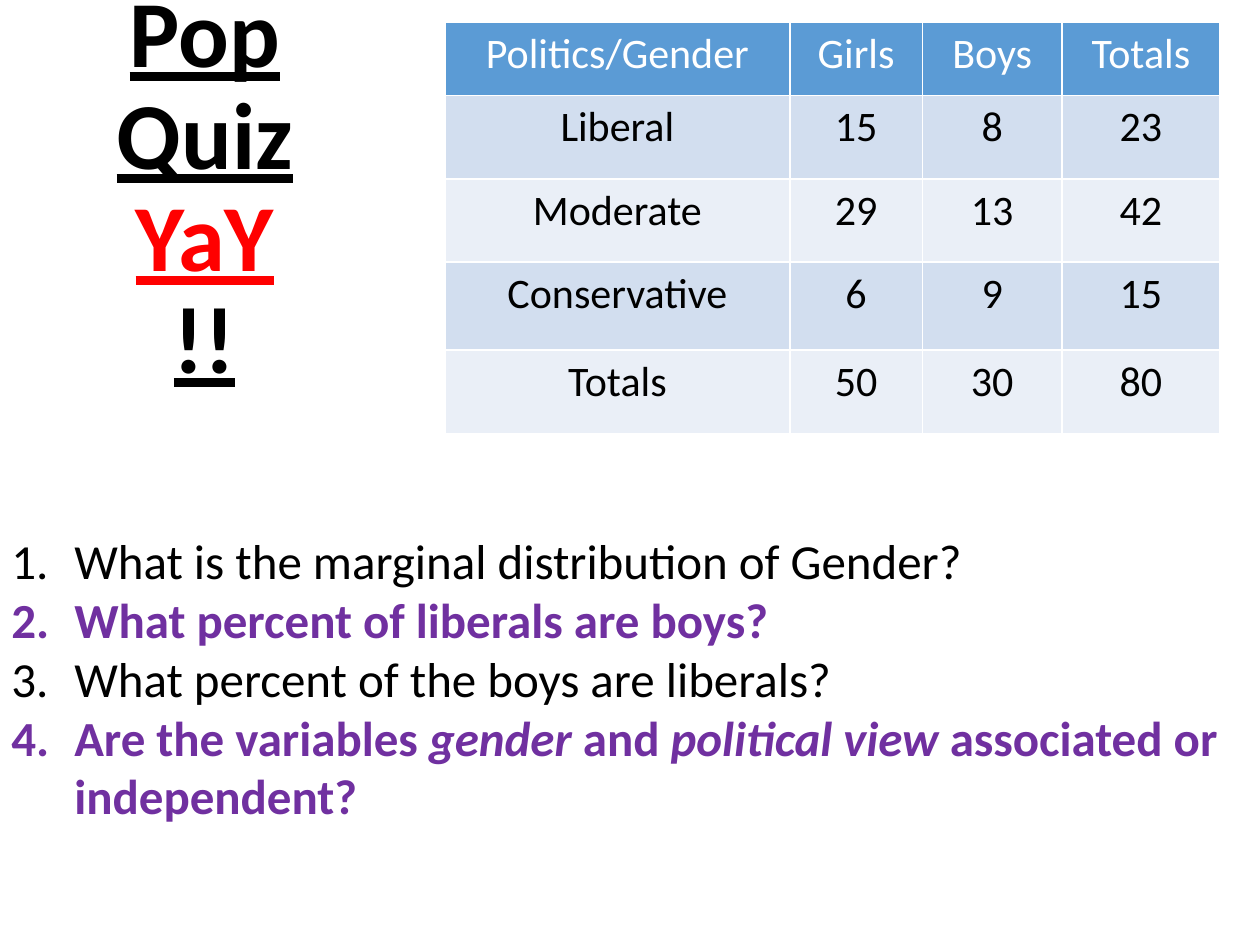
import pptx
import pptx.util
import pptx.dml.color
import pptx.enum.text
import pptx.oxml.ns
import lxml.etree

Inches = pptx.util.Inches
Pt = pptx.util.Pt
CENTER = pptx.enum.text.PP_ALIGN.CENTER
MIDDLE = pptx.enum.text.MSO_ANCHOR.MIDDLE

# Content
TITLE = [("Pop Quiz ", "text"), ("YaY", "alert"), ("\v", "text"), ("!!", "text")]
TABLE = [
    ("Politics/Gender", "Girls", "Boys", "Totals"),
    ("Liberal", "15", "8", "23"),
    ("Moderate", "29", "13", "42"),
    ("Conservative", "6", "9", "15"),
    ("Totals", "50", "30", "80"),
]
COLUMN_WIDTHS = [2.74, 1.05, 1.11, 1.25]
ROW_HEIGHTS = [0.58, 0.66, 0.66, 0.7, 0.66]
# Each question is a list of (text, italic); every second one is emphasised
QUESTIONS = [
    [("What is the marginal distribution of Gender?", False)],
    [("What percent of liberals are boys?", False)],
    [("What percent of the boys are liberals?", False)],
    [("Are the variables ", False), ("gender", True), (" and ", False),
     ("political view ", True), ("associated or independent?", False)],
]

THEME = {
    "font": "Calibri", "title_size": 54, "table_size": 24, "question_size": 28,
    "text": "000000", "alert": "FF0000", "emphasis": "7030A0",
    "header_text": "FFFFFF", "header": "5B9BD5", "bands": ("D2DEEF", "EAEFF7"),
}


def rgb(name):
    return pptx.dml.color.RGBColor.from_string(THEME.get(name, name))


def style_font(font, size, color, bold=False):
    font.name = THEME["font"]
    font.size = Pt(THEME[size])
    font.bold = bold
    font.color.rgb = rgb(color)


def add_text_frame(slide, left, top, width, height):
    box = slide.shapes.add_textbox(Inches(left), Inches(top), Inches(width), Inches(height))
    box.text_frame.word_wrap = True
    return box.text_frame


def add_title(slide):
    frame = add_text_frame(slide, 0.25, 0.74, 2.75, 1.53)
    frame.vertical_anchor = MIDDLE
    paragraph = frame.paragraphs[0]
    paragraph.alignment = CENTER
    paragraph.line_spacing = 0.9
    style_font(paragraph.font, "title_size", "text", bold=True)
    paragraph.font.underline = True
    for text, color in TITLE:
        if text == "\v":
            paragraph.add_line_break()
            continue
        run = paragraph.add_run()
        run.text = text
        run.font.color.rgb = rgb(color)


def add_survey_table(slide):
    table = slide.shapes.add_table(
        len(TABLE), len(COLUMN_WIDTHS), Inches(3.53), Inches(0.18),
        Inches(sum(COLUMN_WIDTHS)), Inches(sum(ROW_HEIGHTS))).table
    for column, width in zip(table.columns, COLUMN_WIDTHS):
        column.width = Inches(width)
    for index, (row, height, values) in enumerate(zip(table.rows, ROW_HEIGHTS, TABLE)):
        row.height = Inches(height)
        is_header = index == 0
        fill = THEME["header"] if is_header else THEME["bands"][(index - 1) % 2]
        for cell, value in zip(row.cells, values):
            cell.text = value
            cell.fill.solid()
            cell.fill.fore_color.rgb = rgb(fill)
            paragraph = cell.text_frame.paragraphs[0]
            paragraph.alignment = CENTER
            style_font(paragraph.font, "table_size", "header_text" if is_header else "text")


def number_paragraph(paragraph):
    properties = paragraph._p.get_or_add_pPr()
    properties.set("marL", str(Inches(0.5)))
    properties.set("indent", str(-Inches(0.5)))
    numbering = lxml.etree.Element(pptx.oxml.ns.qn("a:buAutoNum"), type="arabicPeriod")
    properties.insert(0, numbering)


def add_questions(slide):
    frame = add_text_frame(slide, 0, 4.17, 10, 2.45)
    frame.margin_left = frame.margin_right = Inches(0.09)
    frame.margin_top = frame.margin_bottom = Inches(0.04)
    for index, parts in enumerate(QUESTIONS):
        paragraph = frame.add_paragraph() if index else frame.paragraphs[0]
        number_paragraph(paragraph)
        emphasised = index % 2 == 1
        for text, italic in parts:
            run = paragraph.add_run()
            run.text = text
            style_font(run.font, "question_size",
                       "emphasis" if emphasised else "text", emphasised)
            run.font.italic = italic


def main():
    presentation = pptx.Presentation()
    presentation.slide_width = Inches(10)
    presentation.slide_height = Inches(7.5)
    slide = presentation.slides.add_slide(presentation.slide_layouts[6])
    add_title(slide)
    add_survey_table(slide)
    add_questions(slide)
    presentation.save("out.pptx")


if __name__ == "__main__":
    main()
